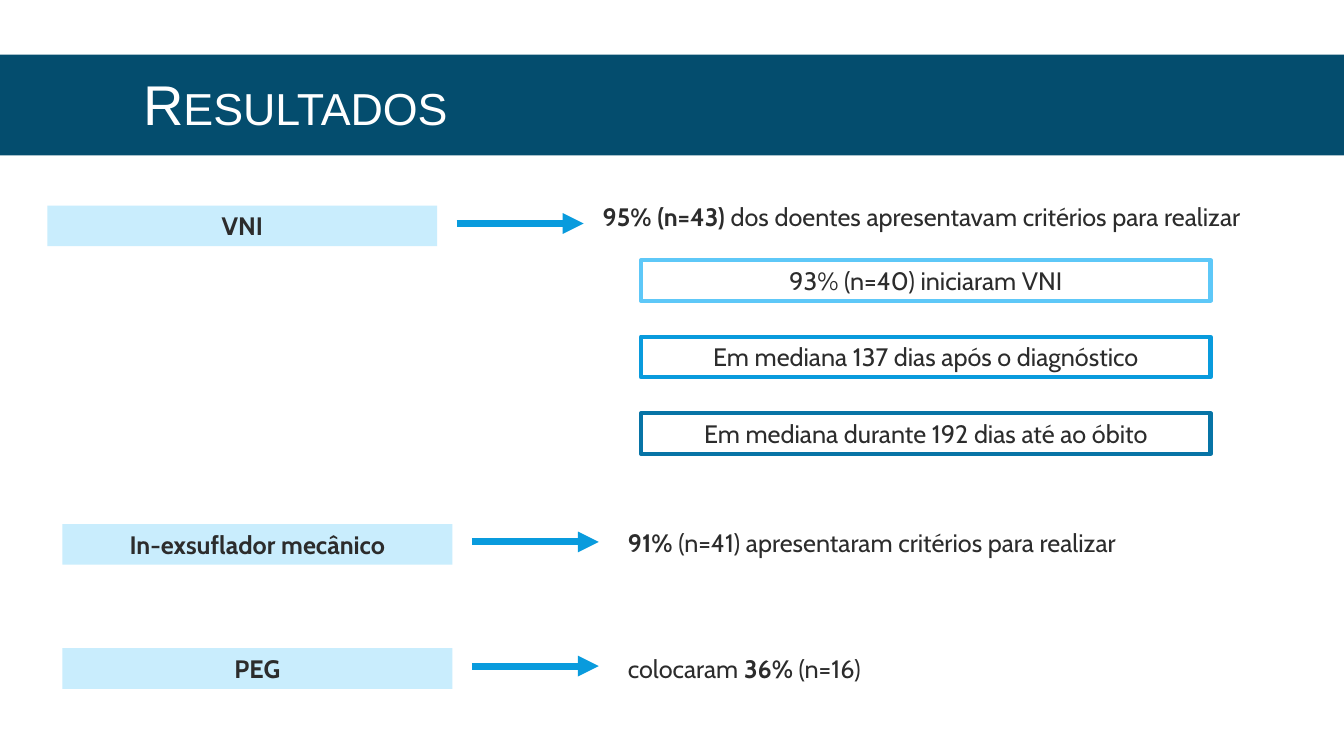
from lxml.etree import SubElement
from pptx import Presentation
from pptx.dml.color import RGBColor
from pptx.enum.shapes import MSO_CONNECTOR, MSO_SHAPE
from pptx.enum.text import MSO_ANCHOR, PP_ALIGN
from pptx.oxml.ns import qn
from pptx.util import Pt

WHITE = RGBColor(0xFF, 0xFF, 0xFF)
INK = RGBColor(0x2C, 0x2C, 0x2C)
NAVY = RGBColor(0x04, 0x4D, 0x6E)
PALE = RGBColor(0xC9, 0xED, 0xFD)
SKY = RGBColor(0x5E, 0xC8, 0xF8)
BLUE = RGBColor(0x09, 0x9B, 0xDD)
DEEP = RGBColor(0x07, 0x74, 0xA6)

# Content: topic, label position, finding position, finding as (text, bold) spans
TITLE = "Resultados"
TOPICS = [
    ("VNI", (33.8, 146.9), (423.4, 140.5),
     [("95% (n=43) ", True), ("dos doentes apresentavam critérios para realizar", False)]),
    ("In-exsuflador mecânico", (44.6, 374.4), (441.4, 373),
     [("91%", True), (" (n=41) apresentaram critérios para realizar", False)]),
    ("PEG", (44.6, 463), (441.4, 463),
     [("colocaram ", False), ("36%", True), (" (n=16)", False)]),
]
DETAILS = [
    ("93% (n=40) iniciaram VNI", SKY),
    ("Em mediana 137 dias após o diagnóstico", BLUE),
    ("Em mediana durante 192 dias até ao óbito", DEEP),
]

# Layout, in points
PAGE_WIDTH, PAGE_HEIGHT = 960, 540
BOX_HEIGHT = 29
LABEL_WIDTH = 278.6
FINDING_WIDTH = 480
ARROW_OFFSET, ARROW_DROP, ARROW_LENGTH = 292.4, 12.75, 90.7
DETAIL_LEFT, DETAIL_TOP, DETAIL_WIDTH, DETAIL_STEP = 457.9, 185.8, 406.8, 54.7
BODY_FONT = {"name": "Cabin", "size": Pt(18)}
TITLE_FONT = {"name": "Arial", "size": Pt(40), "bold": False}


def apply(target, values):
    for name, value in values.items():
        setattr(target, name, value)


def write(box, spans, align):
    apply(box.text_frame, {"word_wrap": True, "vertical_anchor": MSO_ANCHOR.TOP})
    para = box.text_frame.paragraphs[0]
    para.alignment = align
    for text, bold in spans:
        span = para.add_run()
        span.text = text
        apply(span.font, {**BODY_FONT, "bold": bold})
        span.font.color.rgb = INK


def add_box(page, left, top, width, height, fill=None, outline=None):
    box = page.shapes.add_shape(MSO_SHAPE.RECTANGLE, Pt(left), Pt(top), Pt(width), Pt(height))
    box.shadow.inherit = False
    if fill is None:
        box.fill.background()
    else:
        box.fill.solid()
        box.fill.fore_color.rgb = fill
    if outline is None:
        box.line.fill.background()
    else:
        box.line.color.rgb = outline
        box.line.width = Pt(3)
    return box


def add_arrow(page, left, y):
    arrow = page.shapes.add_connector(
        MSO_CONNECTOR.STRAIGHT, Pt(left), Pt(y), Pt(left + ARROW_LENGTH), Pt(y))
    arrow.line.color.rgb = BLUE
    arrow.line.width = Pt(5)
    SubElement(arrow.line._get_or_add_ln(), qn("a:tailEnd"), type="triangle")
    SubElement(arrow._element.spPr, qn("a:effectLst"))


def add_title(page):
    band = add_box(page, 0, 39, PAGE_WIDTH, 72, fill=NAVY)
    title = page.shapes.title
    title._element.addprevious(band._element)  # band goes behind the title
    apply(title, {"left": Pt(95), "top": Pt(18), "width": Pt(770.4), "height": Pt(118.8)})
    title.text_frame.vertical_anchor = MSO_ANCHOR.MIDDLE
    para = title.text_frame.paragraphs[0]
    apply(para, {"alignment": PP_ALIGN.LEFT, "line_spacing": 0.85})
    span = para.add_run()
    span.text = TITLE
    apply(span.font, TITLE_FONT)
    span.font.color.rgb = WHITE
    span._r.get_or_add_rPr().set("cap", "small")


def main():
    deck = Presentation()
    apply(deck, {"slide_width": Pt(PAGE_WIDTH), "slide_height": Pt(PAGE_HEIGHT)})
    page = deck.slides.add_slide(deck.slide_layouts[5])
    add_title(page)

    # Topic label, arrow and finding
    for topic, (left, top), finding_at, spans in TOPICS:
        label = add_box(page, left, top, LABEL_WIDTH, BOX_HEIGHT, fill=PALE)
        write(label, [(topic, True)], PP_ALIGN.CENTER)
        add_arrow(page, left + ARROW_OFFSET, top + ARROW_DROP)
        finding = page.shapes.add_textbox(
            *map(Pt, finding_at), Pt(FINDING_WIDTH), Pt(BOX_HEIGHT))
        write(finding, spans, PP_ALIGN.LEFT)

    # Outlined details under the first finding
    for row, (text, colour) in enumerate(DETAILS):
        detail = add_box(page, DETAIL_LEFT, DETAIL_TOP + row * DETAIL_STEP,
                         DETAIL_WIDTH, BOX_HEIGHT, outline=colour)
        write(detail, [(text, False)], PP_ALIGN.CENTER)

    deck.save("out.pptx")


if __name__ == "__main__":
    main()
